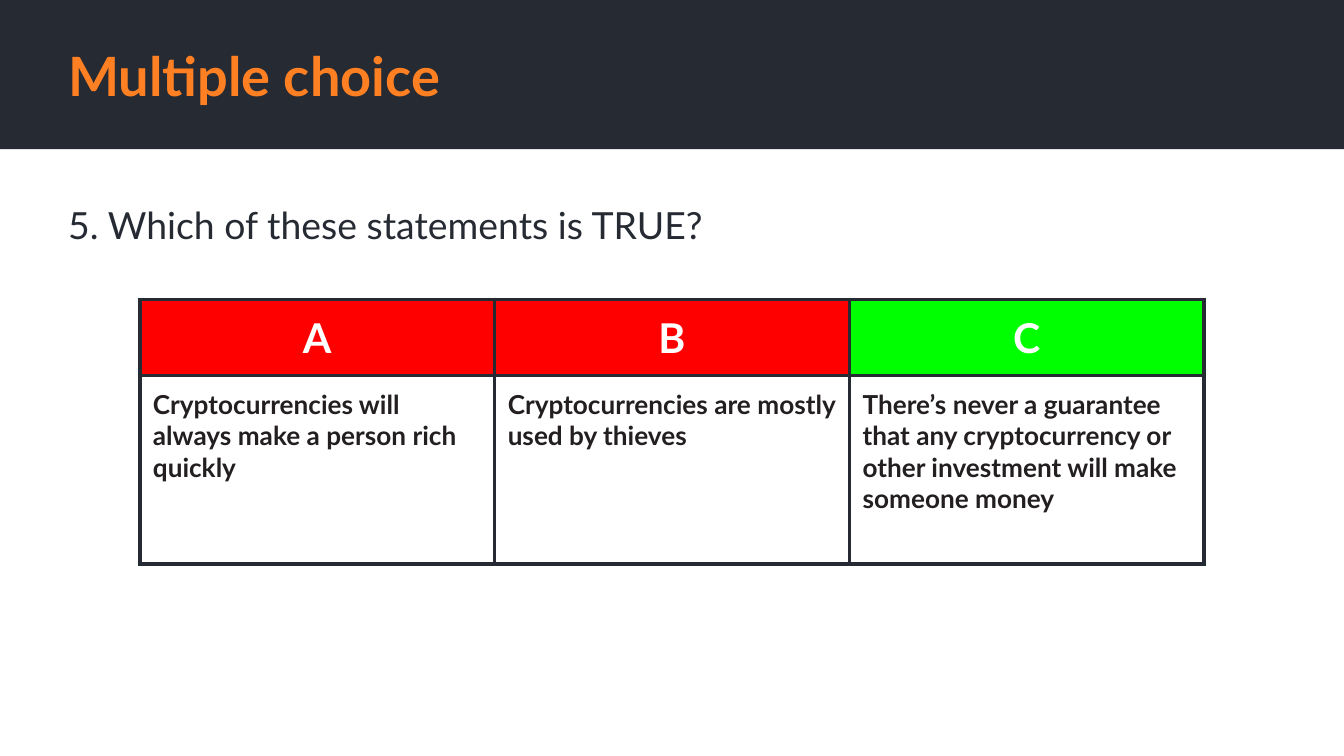
from lxml import etree
from pptx import Presentation
from pptx.dml.color import RGBColor
from pptx.enum.shapes import MSO_SHAPE
from pptx.enum.text import MSO_ANCHOR, PP_ALIGN
from pptx.oxml.ns import qn
from pptx.util import Cm, Pt

RECTANGLE = MSO_SHAPE.RECTANGLE
TOP, MIDDLE = MSO_ANCHOR.TOP, MSO_ANCHOR.MIDDLE
LEFT, CENTER = PP_ALIGN.LEFT, PP_ALIGN.CENTER

FONT = "Lato"
NAVY, ORANGE, WHITE, INK = "262A33", "FF8022", "FFFFFF", "231F20"
WRONG, RIGHT = "FF0000", "00FF00"
INSET = Cm(0.25)
BORDER = Pt(2.25)

ANSWERS = [
    ("A", "Cryptocurrencies will always make a person rich quickly", WRONG),
    ("B", "Cryptocurrencies are mostly used by thieves", WRONG),
    ("C", "There’s never a guarantee that any cryptocurrency or other investment will make someone money", RIGHT),
]


def color(value):
    return RGBColor.from_string(value)


def write(paragraph, words, size, ink, bold=False, align=LEFT):
    paragraph.alignment = align
    run = paragraph.add_run()
    run.text = words
    run.font.name = FONT
    run.font.size = Pt(size)
    run.font.bold = bold
    run.font.color.rgb = color(ink)


def set_insets(holder):
    holder.margin_left = holder.margin_right = INSET
    holder.margin_top = holder.margin_bottom = INSET


def add_label(slide, box, words, size, ink, bold=False, anchor=TOP):
    frame = slide.shapes.add_textbox(*map(Cm, box)).text_frame
    frame.word_wrap = True
    frame.vertical_anchor = anchor
    set_insets(frame)
    write(frame.paragraphs[0], words, size, ink, bold)


def add_title_band(slide, box):
    left, top, width, height = box
    band = slide.shapes.add_shape(RECTANGLE, *map(Cm, box))
    band.shadow.inherit = False
    band.fill.solid()
    band.fill.fore_color.rgb = color(NAVY)
    band.line.fill.background()
    title_box = (left + 1.04, top + 0.71, width - 3.2, height / 2)
    add_label(slide, title_box, "Multiple choice", 29, ORANGE, True, MIDDLE)


def add_borders(cell):
    properties = cell._tc.get_or_add_tcPr()
    for side in ("a:lnL", "a:lnR", "a:lnT", "a:lnB"):
        line = etree.SubElement(properties, qn(side), w=str(BORDER))
        fill = etree.SubElement(line, qn("a:solidFill"))
        etree.SubElement(fill, qn("a:srgbClr"), val=NAVY)


def fill_cell(cell, words, size, ink, align=LEFT, background=None):
    set_insets(cell)
    add_borders(cell)
    if background:
        cell.fill.solid()
        cell.fill.fore_color.rgb = color(background)
    else:
        cell.fill.background()
    write(cell.text_frame.paragraphs[0], words, size, ink, True, align)


def add_answers(slide, box, header_height):
    width, height = box[2:]
    answers = slide.shapes.add_table(2, len(ANSWERS), *map(Cm, box)).table
    answers.horz_banding = False
    answers.rows[0].height = Cm(header_height)
    answers.rows[1].height = Cm(height - header_height)
    for index, (letter, statement, verdict) in enumerate(ANSWERS):
        answers.columns[index].width = Cm(width / len(ANSWERS))
        fill_cell(answers.cell(0, index), letter, 22, WHITE, CENTER, verdict)
        fill_cell(answers.cell(1, index), statement, 14, INK)


def main():
    deck = Presentation()
    deck.slide_width, deck.slide_height = Cm(25.4), Cm(14.29)
    slide = deck.slides.add_slide(deck.slide_layouts[6])
    add_title_band(slide, (0, 0, 25.4, 2.82))
    add_answers(slide, (2.64, 5.66, 20.12, 5), 1.44)
    add_label(slide, (1.04, 3.58, 21.29, 3.25), "5. Which of these statements is TRUE?", 20, NAVY)
    deck.save("out.pptx")


if __name__ == "__main__":
    main()
